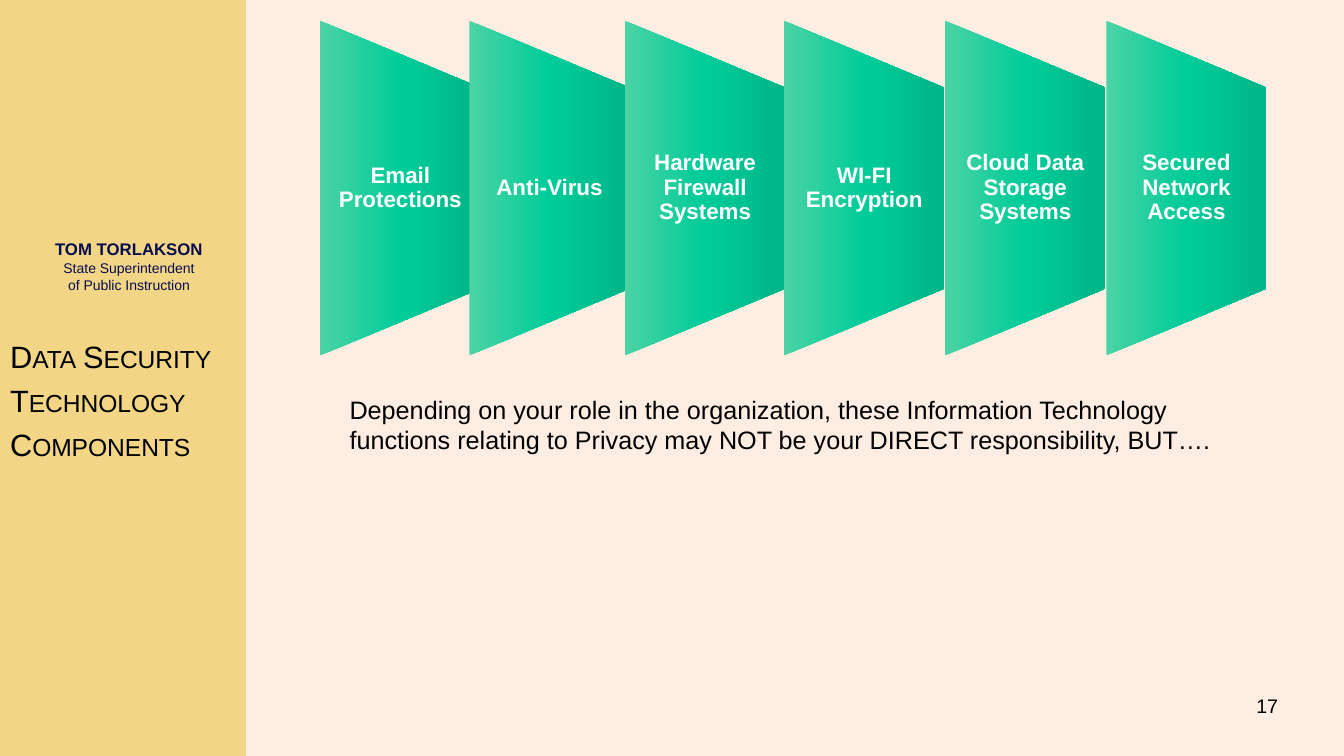
from copy import deepcopy

from pptx import Presentation
from pptx.dml.color import RGBColor
from pptx.enum.shapes import MSO_SHAPE as SHAPE
from pptx.enum.text import MSO_ANCHOR as ANCHOR, MSO_AUTO_SIZE as AUTO, PP_ALIGN as ALIGN
from pptx.oxml import parse_xml
from pptx.oxml.ns import nsdecls, qn
from pptx.util import Cm, Pt


def rgb(value):
    return RGBColor.from_string(value)


def write(p, text, size, color="000000", bold=False):
    r = p.add_run()
    r.text = text
    for name, value in {"name": "Arial", "size": Pt(size), "bold": bold}.items():
        setattr(r.font, name, value)
    r.font.color.rgb = rgb(color)
    return r


prs = Presentation()
prs.slide_width, prs.slide_height = Cm(33.87), Cm(19.05)
prs.element.set("firstSlideNum", "17")
s = prs.slides.add_slide(prs.slide_layouts[5])

# Background and sidebar
s.background.fill.solid()
s.background.fill.fore_color.rgb = rgb("FEEDE2")
sidebar = s.shapes.add_shape(SHAPE.RECTANGLE, 0, 0, Cm(6.2), prs.slide_height)
sidebar.shadow.inherit = False
sidebar.fill.solid()
sidebar.fill.fore_color.rgb = rgb("F3D685")
sidebar.line.fill.background()

# Superintendent's name and office
tf = s.shapes.add_textbox(Cm(0.89), Cm(5.74), Cm(4.72), Cm(1.93)).text_frame
tf.word_wrap = True
tf.vertical_anchor = ANCHOR.MIDDLE
p = tf.paragraphs[0]
p.alignment = ALIGN.CENTER
write(p, "TOM TORLAKSON", 12, "070C51", True)
for line in ("State Superintendent", "of Public Instruction"):
    p.add_line_break()
    write(p, line, 10, "070C51")

# Title in small capitals, placed above the sidebar
title = s.shapes.title
title.left, title.top, title.width, title.height = Cm(0), Cm(9.63), Cm(10.08), Cm(2.16)
s.shapes._spTree.append(title._element)
tf = title.text_frame
for name, value in {"word_wrap": True, "auto_size": AUTO.NONE,
                    "vertical_anchor": ANCHOR.BOTTOM}.items():
    setattr(tf, name, value)
for i, line in enumerate(("Data Security", "Technology", "Components")):
    p = tf.add_paragraph() if i else tf.paragraphs[0]
    p.alignment = ALIGN.LEFT
    p.space_before = Pt(5 if i else 0)
    r = write(p, line, 22)
    r._r.get_or_add_rPr().set("cap", "small")

# Chain of security components: trapezoids turned to point right
LENGTH, DEPTH = 8.43, 4.04
components = [
    (8.07, "Email Protections"),
    (11.83, "Anti-Virus"),
    (15.75, "Hardware Firewall Systems"),
    (19.76, "WI-FI Encryption"),
    (23.82, "Cloud Data Storage Systems"),
    (27.88, "Secured Network Access"),
]
for x, label in components:
    sp = s.shapes.add_shape(SHAPE.FLOWCHART_MANUAL_OPERATION,
                            Cm(x - (LENGTH - DEPTH) / 2), Cm(2.72), Cm(LENGTH), Cm(DEPTH))
    sp.rotation = 270
    sp.shadow.inherit = False
    sp.line.fill.background()
    sp.fill.gradient()
    sp.fill.gradient_angle = 270
    stop_list = sp._element.spPr.find(qn("a:gradFill")).find(qn("a:gsLst"))
    stop_list.insert(1, deepcopy(stop_list[0]))
    for stop, (position, color) in zip(sp.fill.gradient_stops,
                                       ((0, "4BD3A4"), (0.5, "00CC99"), (1, "00B588"))):
        stop.position = position
        stop.color.rgb = rgb(color)

    tf = s.shapes.add_textbox(Cm(x), Cm(2.21), Cm(DEPTH), Cm(5.05)).text_frame
    for name, value in {"word_wrap": True, "vertical_anchor": ANCHOR.MIDDLE,
                        "margin_left": Cm(0.28), "margin_right": Cm(0.28),
                        "margin_top": 0, "margin_bottom": 0}.items():
        setattr(tf, name, value)
    p = tf.paragraphs[0]
    p.alignment = ALIGN.CENTER
    p.line_spacing = 0.9
    write(p, label, 16, "FFFFFF", True)

# Closing remark
tf = s.shapes.add_textbox(Cm(8.56), Cm(9.8), Cm(22.91), Cm(1.8)).text_frame
tf.word_wrap = True
write(tf.paragraphs[0], "Depending on your role in the organization, these Information Technology "
      "functions relating to Privacy may NOT be your DIRECT responsibility, BUT….", 18)

# Slide number as a field
tf = s.shapes.add_textbox(Cm(26.26), Cm(17.35), Cm(6.2), Cm(1.27)).text_frame
tf.word_wrap = True
p = tf.paragraphs[0]
p.alignment = ALIGN.RIGHT
r = write(p, "17", 14)
field = parse_xml(f'<a:fld {nsdecls("a")} id="{{B6F15528-21DE-4FAA-801E-634DDDAF4B2B}}" type="slidenum"/>')
field.extend(list(r._r))
p._p.replace(r._r, field)

prs.save("out.pptx")
